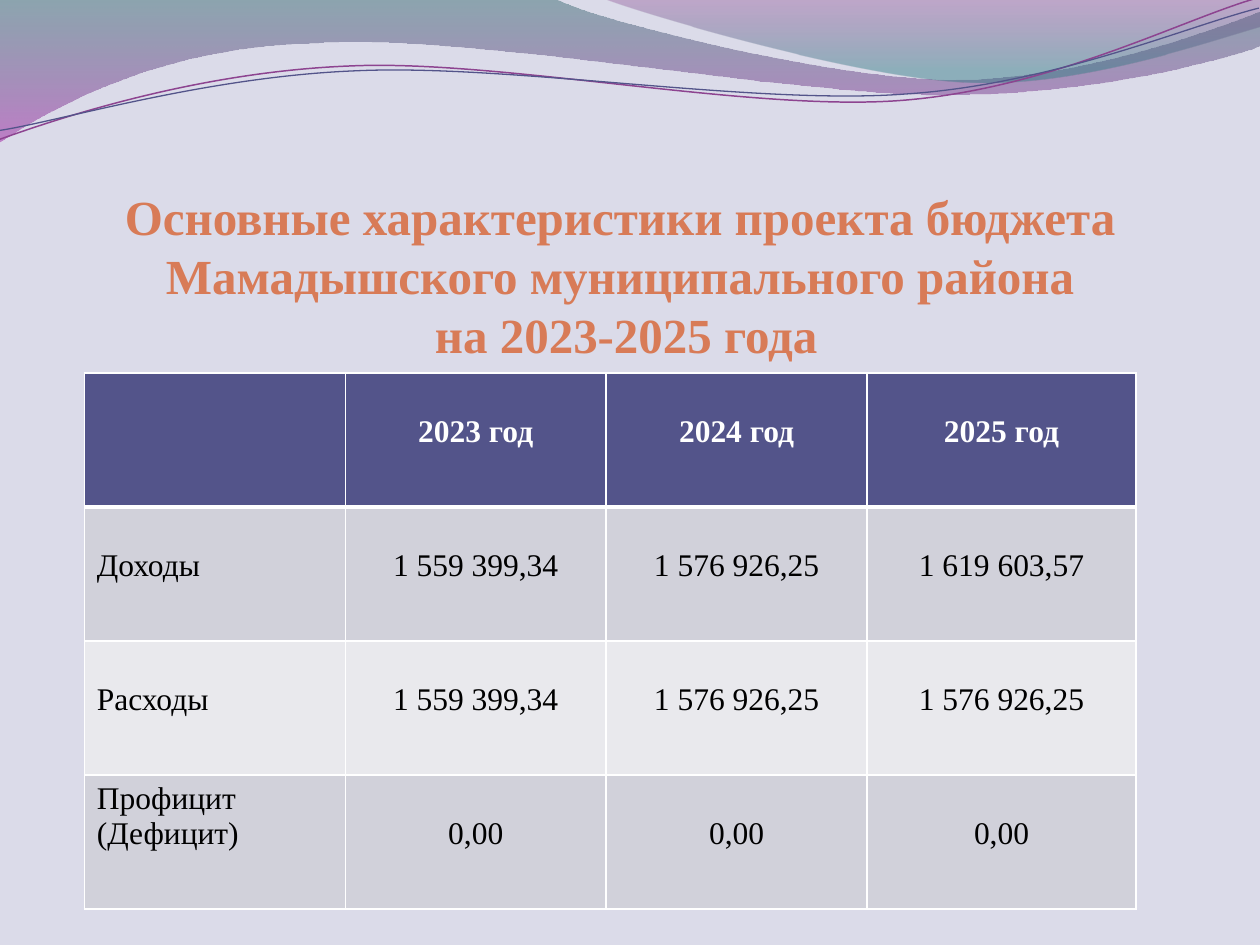
from lxml.etree import SubElement
from pptx import Presentation
from pptx.dml.color import RGBColor
from pptx.enum.text import MSO_ANCHOR as Anchor, PP_ALIGN as Align
from pptx.oxml.ns import qn
from pptx.util import Cm, Pt

FONT = "Times New Roman"
LAVENDER = RGBColor(0xDB, 0xDB, 0xE9)
TEAL_DARK = RGBColor(0x2D, 0x63, 0x68)
VIOLET = RGBColor(0xA5, 0x30, 0xA9)
PLUM = RGBColor(0x7F, 0x2F, 0x82)
TEAL = RGBColor(0x2F, 0x7B, 0x82)
PURPLE = RGBColor(0x8D, 0x44, 0x90)
INDIGO = RGBColor(0x53, 0x54, 0x8A)
ORANGE = RGBColor(0xD8, 0x7B, 0x57)
WHITE = RGBColor(0xFF, 0xFF, 0xFF)
BLACK = RGBColor(0, 0, 0)
BAND_DARK = RGBColor(0xD1, 0xD1, 0xDA)
BAND_LIGHT = RGBColor(0xE9, 0xE9, 0xED)

UNIT = Cm(2.54) / 1000  # freeform grid: a thousandth of an inch
CURVE_TILT = -2.7

# Wave outlines: a start point, then segments of one point (straight)
# or three points (Bezier), in inches from the corner of the header
LEFT_WAVE = [
    (0, 0), [(4.4, -0.01)],
    [(4.76, 0.17), (6.64, 0.63), (7.58, 0.63)],
    [(8.53, 0.63), (9.58, 0.26), (10, 0.09)],
    [(10.01, 0.36)],
    [(9.83, 0.44), (8.7, 0.76), (7.46, 0.75)],
    [(6.22, 0.75), (3.82, 0.28), (2.57, 0.34)],
    [(1.29, 0.36), (0.46, 0.83), (-0.01, 1.13)],
    [(0, 0)],
]
RIGHT_WAVE = [
    (4.79, -0.01),
    [(5.09, 0.11), (6.82, 0.62), (7.69, 0.65)],
    [(8.56, 0.69), (9.61, 0.32), (10, 0.21)],
    [(10, 0)], [(4.79, -0.01)],
]
# Thin curves, before they are tilted
PURPLE_LINE = [
    (-0.02, 0.87),
    [(0.47, 0.72), (1.58, 0.41), (2.78, 0.42)],
    [(3.96, 0.42), (5.92, 0.93), (7.12, 0.9)],
    [(8.32, 0.87), (9.4, 0.36), (10, 0.22)],
]
INDIGO_LINE = [
    (-0.02, 0.8),
    [(0.46, 0.75), (1.64, 0.45), (2.83, 0.46)],
    [(4.03, 0.46), (5.96, 0.88), (7.16, 0.85)],
    [(8.35, 0.83), (9.42, 0.42), (10.01, 0.3)],
]

TITLE = ("Основные характеристики проекта бюджета "
         "Мамадышского муниципального района\v на 2023-2025 года")
BUDGET = [
    ["", "2023 год", "2024 год", "2025 год"],
    ["Доходы", "1 559 399,34", "1 576 926,25", "1 619 603,57"],
    ["Расходы", "1 559 399,34", "1 576 926,25", "1 576 926,25"],
    ["Профицит\n(Дефицит)", "0,00", "0,00", "0,00"],
]


def add_outline(slide, left, top, outline, close):
    start, *segments = outline
    grid = [(round(x * 1000), round(y * 1000))
            for x, y in [start] + [point for segment in segments for point in segment]]
    builder = slide.shapes.build_freeform(*grid[0], scale=UNIT)
    builder.add_line_segments(grid[1:], close=close)
    shape = builder.convert_to_shape(left, top)
    shape.shadow.inherit = False

    # Join each run of three points into one Bezier segment
    steps = iter(list(shape.element.spPr.iter(qn("a:lnTo"))))
    for segment in segments:
        members = [next(steps) for _ in segment]
        if len(members) == 3:
            members[0].tag = qn("a:cubicBezTo")
            for member in members[1:]:
                members[0].append(member[0])
                member.getparent().remove(member)
    return shape


def add_wave(slide, left, top, outline, stops):
    """Closed wave; stops are (position, colour, opacity in percent)."""
    wave = add_outline(slide, left, top, outline, close=True)
    wave.line.fill.background()
    wave.fill.gradient()
    wave.fill.gradient_angle = 270  # top to bottom
    for stop, (position, color, opacity) in zip(wave.fill.gradient_stops, stops):
        stop.position = position
        stop.color.rgb = color
    for rgb, stop in zip(wave.element.spPr.iter(qn("a:srgbClr")), stops):
        SubElement(rgb, qn("a:alpha"), val=str(stop[2] * 1000))


def add_header(slide, left, top):
    # Gradient waves
    add_wave(slide, left, top, LEFT_WAVE, [(0, TEAL_DARK, 45), (1, VIOLET, 55)])
    add_wave(slide, left, top, RIGHT_WAVE, [(0, PLUM, 30), (0.8, TEAL, 45)])
    # Thin curves
    for outline, color, width in ((PURPLE_LINE, PURPLE, 0.85), (INDIGO_LINE, INDIGO, 0.75)):
        curve = add_outline(slide, left, top, outline, close=False)
        curve.rotation = CURVE_TILT
        curve.fill.background()
        curve.line.color.rgb = color
        curve.line.width = Pt(width)


def style(paragraph, size, color, bold, align):
    paragraph.alignment = align
    font = paragraph.font
    font.name, font.size, font.bold = FONT, Pt(size), bold
    font.color.rgb = color


def add_title(slide, left, top, width, height):
    frame = slide.shapes.add_textbox(left, top, width, height).text_frame
    frame.word_wrap = True
    frame.vertical_anchor = Anchor.BOTTOM
    frame.margin_left = frame.margin_right = frame.margin_top = frame.margin_bottom = 0
    heading = frame.paragraphs[0]
    heading.text = TITLE
    style(heading, 28, ORANGE, True, Align.CENTER)


def add_bottom_rule(cell, color, width):
    properties = cell._tc.get_or_add_tcPr()
    rule = SubElement(properties, qn("a:lnB"), w=str(Pt(width)))
    SubElement(SubElement(rule, qn("a:solidFill")), qn("a:srgbClr"), val=str(color))
    properties.insert(0, rule)  # borders come before the fill


def add_budget_table(slide, left, top, width, height):
    rows, columns = len(BUDGET), len(BUDGET[0])
    # The default table style supplies the thin white rules
    table = slide.shapes.add_table(rows, columns, left, top, width, height).table
    year_width = Cm(5.26)
    for column in list(table.columns)[:-1]:
        column.width = year_width
    table.columns[columns - 1].width = width - year_width * (columns - 1)

    for r, values in enumerate(BUDGET):
        header = r == 0
        background = INDIGO if header else BAND_DARK if r % 2 else BAND_LIGHT
        for c, value in enumerate(values):
            cell = table.cell(r, c)
            cell.fill.solid()
            cell.fill.fore_color.rgb = background
            if header:
                add_bottom_rule(cell, WHITE, 3)
            cell.text = value
            # One-line entries sit a line lower
            cell.margin_top = Cm(0.13 if "\n" in value else 0.84)
            for paragraph in cell.text_frame.paragraphs:
                style(paragraph, 18, WHITE if header else BLACK, header,
                      Align.CENTER if c else Align.LEFT)


def main():
    deck = Presentation()
    deck.slide_width, deck.slide_height = Cm(25.4), Cm(19.05)
    slide = deck.slides.add_slide(deck.slide_layouts[6])
    slide.background.fill.solid()
    slide.background.fill.fore_color.rgb = LAVENDER

    add_header(slide, Cm(0), Cm(0))
    add_title(slide, Cm(1.9), Cm(1.52), Cm(21.2), Cm(5.8))
    add_budget_table(slide, Cm(1.7), Cm(7.52), Cm(21.2), Cm(10.8))
    deck.save("out.pptx")


if __name__ == "__main__":
    main()
